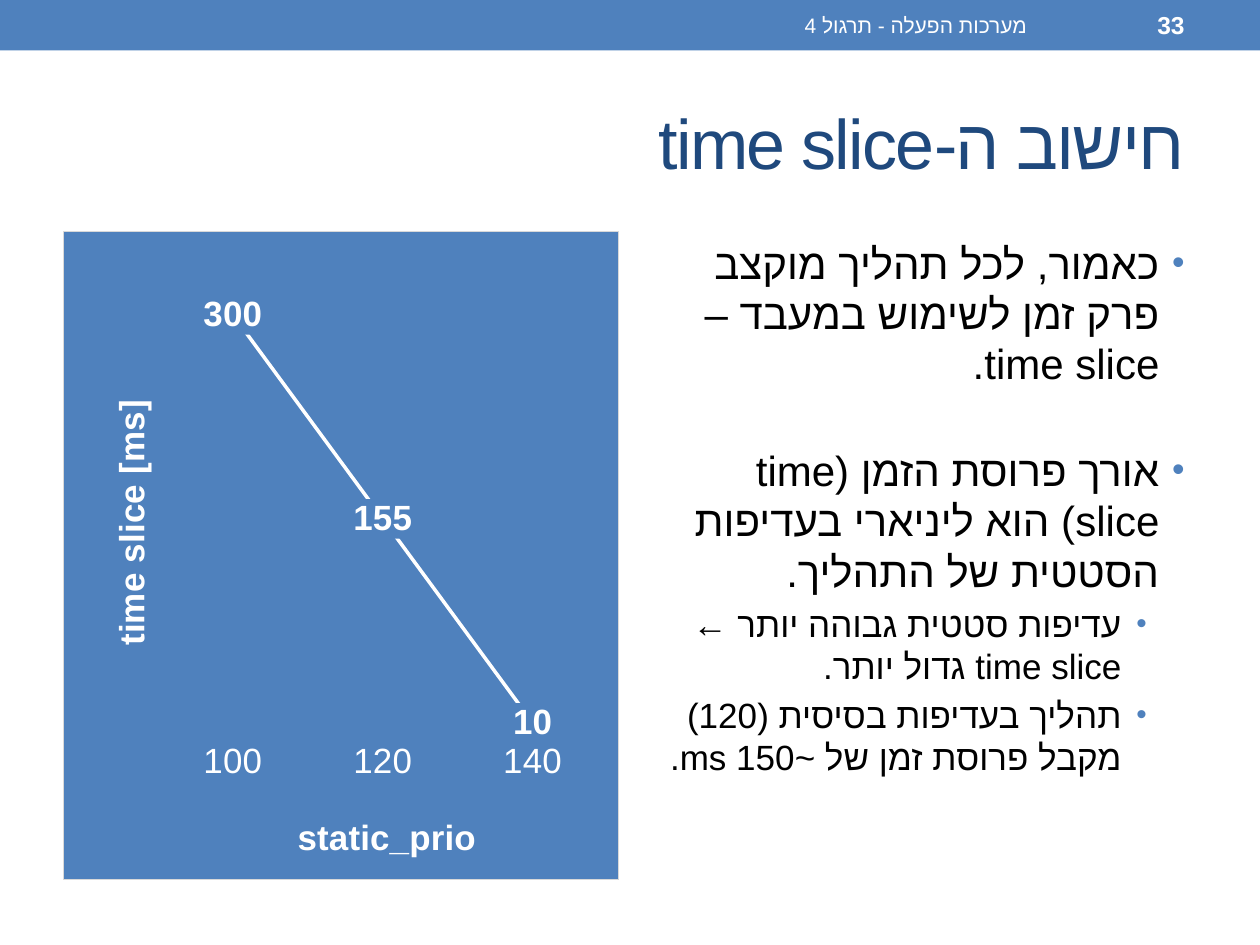
from lxml import etree
from pptx import Presentation
from pptx.chart.data import CategoryChartData
from pptx.dml.color import RGBColor
from pptx.enum import chart as charts, shapes, text
from pptx.oxml import parse_xml
from pptx.oxml.ns import nsdecls, qn
from pptx.util import Pt

FONT = "Arial"
BLUE, NAVY, WHITE, BLACK, GRAY = "4F81BD", "1F497D", "FFFFFF", "000000", "D9D9D9"


def color(value):
    """Turn a hex string into a colour."""
    return RGBColor.from_string(value)


def style_font(font, size, value, bold=False):
    """Set family, size, colour and weight of a font."""
    font.name, font.size, font.bold = FONT, Pt(size), bold
    font.color.rgb = color(value)


def add_span(para, words, size, value, bold=False, spacing=0):
    """Add one run, with the same family for Hebrew letters."""
    span = para.add_run()
    span.text = words
    style_font(span.font, size, value, bold)
    properties = span.font._element
    etree.SubElement(properties, qn("a:cs")).set("typeface", FONT)
    if spacing:
        properties.set("spc", str(spacing * 100))


def set_rtl(para):
    """Make a paragraph run from right to left."""
    para.alignment = text.PP_ALIGN.RIGHT
    properties = para._p.get_or_add_pPr()
    properties.set("rtl", "1")
    return properties


def add_frame(page, box, anchor):
    """Add a wrapping text box and return its frame."""
    frame = page.shapes.add_textbox(*map(Pt, box)).text_frame
    frame.word_wrap = True
    frame.vertical_anchor = anchor
    return frame


def add_line(page, box, words, size, value, bold=False, spacing=0):
    """Place a single right-to-left line, centred vertically."""
    para = add_frame(page, box, text.MSO_ANCHOR.MIDDLE).paragraphs[0]
    set_rtl(para)
    add_span(para, words, size, value, bold, spacing)


def add_header(page, box):
    """Draw the top bar with the course name and the page number."""
    left, top, width, height = box
    bar = page.shapes.add_shape(shapes.MSO_SHAPE.RECTANGLE, *map(Pt, box))
    bar.shadow.inherit = False
    bar.fill.solid()
    bar.fill.fore_color.rgb = color(BLUE)
    bar.line.fill.background()
    inner_top, inner_height = top + 1.5, height - 3
    add_line(page, (left + 270, inner_top, 324, inner_height), "מערכות הפעלה - תרגול 4", 12, WHITE)
    add_line(page, (left + width - 120, inner_top, 84, inner_height), "33", 14, WHITE, bold=True)


def add_bullets(page, box, items):
    """Place bulleted paragraphs given as level, space before and lines."""
    frame = add_frame(page, box, text.MSO_ANCHOR.TOP)
    for index, (level, space, lines) in enumerate(items):
        para = frame.add_paragraph() if index else frame.paragraphs[0]
        para.level = level
        para.space_before = Pt(space)
        properties = set_rtl(para)
        properties.set("marL", str(Pt((14.4, 36)[level])))
        properties.set("indent", str(Pt(-14.4)))
        for markup in (
            f'<a:buClr {nsdecls("a")}><a:srgbClr val="{BLUE}"/></a:buClr>',
            f'<a:buSzPct {nsdecls("a")} val="85000"/>',
            f'<a:buFont {nsdecls("a")} typeface="{FONT}"/>',
            f'<a:buChar {nsdecls("a")} char="•"/>',
        ):
            properties.append(parse_xml(markup))
        for number, words in enumerate(lines):
            if number:
                para.add_line_break()
            add_span(para, words, (24, 20)[level], BLACK)


def set_layout(parent, index, inner=False, **values):
    """Give a chart part a manual layout in fractions of the chart."""
    old = parent.find(qn("c:layout"))
    if old is not None:
        parent.remove(old)
    layout = etree.Element(qn("c:layout"))
    manual = etree.SubElement(layout, qn("c:manualLayout"))
    settings = {"layoutTarget": "inner"} if inner else {}
    settings.update(xMode="edge", yMode="edge", **values)
    for name, value in settings.items():
        etree.SubElement(manual, qn(f"c:{name}")).set("val", str(value))
    parent.insert(index, layout)


def add_axis_title(axis, words, x, y, rotation=0):
    """Write a bold axis title at a place in the chart."""
    frame = axis.axis_title.text_frame
    span = frame.paragraphs[0].add_run()
    span.text = words
    style_font(span.font, 20, WHITE, bold=True)
    title = axis.axis_title._element
    body = title.find(".//" + qn("a:bodyPr"))
    body.set("rot", str(rotation * 60000))
    body.set("vert", "horz")
    set_layout(title, 1, x=x, y=y)


def fill_markup(border=""):
    """Return blue shape properties for a chart part."""
    return parse_xml(
        f'<c:spPr {nsdecls("c", "a")}><a:solidFill><a:srgbClr val="{BLUE}"/></a:solidFill>{border}</c:spPr>'
    )


def add_slice_chart(page, box):
    """Chart the time slice against the static priority."""
    data = CategoryChartData()
    data.categories = ["100", "120", "140"]
    data.add_series("Series 1", (300, 155, 10))
    chart = page.shapes.add_chart(charts.XL_CHART_TYPE.LINE, *map(Pt, box), data).chart
    chart.has_title = chart.has_legend = False
    style_font(chart.font, 20, WHITE)
    border = (
        f'<a:ln w="{Pt(0.75)}"><a:solidFill><a:srgbClr val="{GRAY}"/></a:solidFill></a:ln>'
    )
    chart._chartSpace.find(qn("c:chart")).addnext(fill_markup(border))
    set_layout(chart._chartSpace.find(".//" + qn("c:plotArea")), 0, True, x=0.17, y=0.02, w=0.81, h=0.76)

    priority, duration = chart.category_axis, chart.value_axis
    priority.major_tick_mark = priority.minor_tick_mark = charts.XL_TICK_MARK.NONE
    priority.format.line.fill.background()
    style_font(priority.tick_labels.font, 20, WHITE)
    duration.minimum_scale, duration.maximum_scale, duration.major_unit = 0, 350, 50
    duration.has_major_gridlines = False
    duration.visible = False
    add_axis_title(priority, "static_prio", 0.41, 0.89)
    add_axis_title(duration, "time slice [ms]", 0.07, 0.25, -90)

    plot = chart.plots[0]
    plot.vary_by_categories = False
    series = plot.series[0]
    series.smooth = False
    series.marker.style = charts.XL_MARKER_STYLE.NONE
    series.format.line.color.rgb = color(WHITE)
    series.format.line.width = Pt(2)
    labels = series.data_labels
    labels.show_value = True
    labels.position = charts.XL_LABEL_POSITION.CENTER
    style_font(labels.font, 20, WHITE, bold=True)
    labels._element.find(qn("c:txPr")).addprevious(fill_markup())


def main():
    """Build the deck with its one page."""
    deck = Presentation()
    deck.slide_width, deck.slide_height = Pt(720), Pt(540)
    page = deck.slides.add_slide(deck.slide_layouts[6])
    add_header(page, (0, 0, 720, 28.8))
    add_line(page, (36, 42, 648, 78), "חישוב ה-time slice", 40, NAVY, spacing=-1)
    add_bullets(page, (366, 132, 318, 371), [
        (0, 0, ["כאמור, לכל תהליך מוקצב פרק זמן לשימוש במעבד – ", "time slice."]),
        (0, 32, ["אורך פרוסת הזמן (time slice) הוא ליניארי בעדיפות הסטטית של התהליך."]),
        (1, 4, ["עדיפות סטטית גבוהה יותר ← time slice גדול יותר."]),
        (1, 4, ["תהליך בעדיפות בסיסית (120) מקבל פרוסת זמן של ~150 ms."]),
    ])
    add_slice_chart(page, (36, 132, 318, 371))
    deck.save("out.pptx")


if __name__ == "__main__":
    main()
